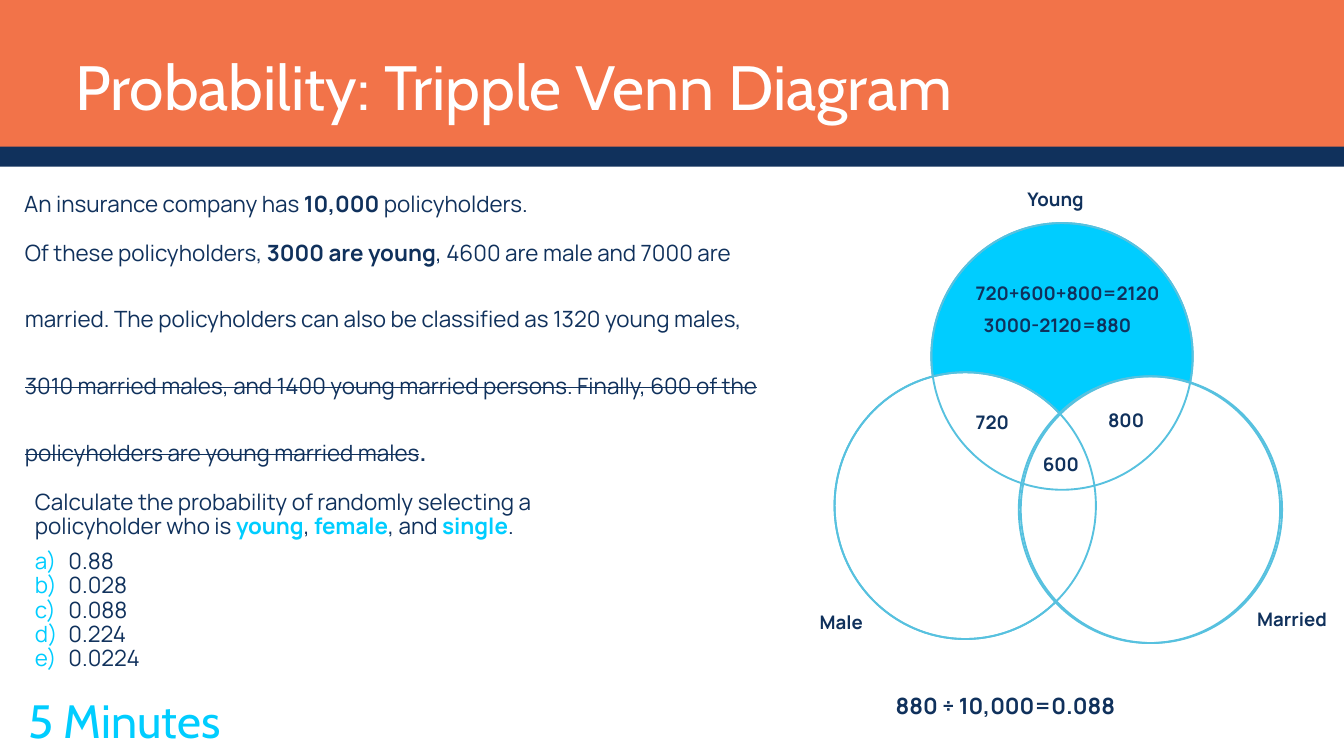
import pptx
import pptx.dml.color
import pptx.enum.shapes
import pptx.enum.text
import pptx.util
from lxml import etree
from pptx.oxml.ns import qn

Pt = pptx.util.Pt
SHAPES = pptx.enum.shapes.MSO_SHAPE
COLOURS = {
    "orange": "F27349",
    "navy": "10315C",
    "cyan": "00CDFF",
    "outline": "57C1DF",
    "white": "FFFFFF",
}


def rgb(name):
    """Return the named colour."""
    return pptx.dml.color.RGBColor.from_string(COLOURS[name])


def add_shape(slide, kind, box, fill=None, line=None):
    """Add a preset shape with an optional fill and outline."""
    shape = slide.shapes.add_shape(kind, *map(Pt, box))
    shape.shadow.inherit = False
    if fill:
        shape.fill.solid()
        shape.fill.fore_color.rgb = rgb(fill)
    else:
        shape.fill.background()
    if line:
        shape.line.color.rgb = rgb(line)
        shape.line.width = Pt(2)
    else:
        shape.line.fill.background()
    return shape


def add_letter(paragraph):
    """Number a paragraph a), b), c) with a hanging indent."""
    properties = paragraph._p.get_or_add_pPr()
    properties.set("marL", str(Pt(36)))
    properties.set("indent", str(-Pt(36)))
    colour = etree.SubElement(properties, qn("a:buClr"))
    etree.SubElement(colour, qn("a:srgbClr"), val=COLOURS["cyan"])
    etree.SubElement(properties, qn("a:buAutoNum"), type="alphaLcParenR")


def add_text(slide, box, paragraphs, size=24, font="Manrope", colour="navy", bold=False,
             spacing=None, centred=False, inset=False, lettered=False):
    """Add a text box from paragraphs of (text, format changes) runs."""
    shape = slide.shapes.add_textbox(*map(Pt, box))
    frame = shape.text_frame
    frame.word_wrap = True
    frame.auto_size = pptx.enum.text.MSO_AUTO_SIZE.SHAPE_TO_FIT_TEXT
    if not inset:
        frame.margin_left = frame.margin_right = frame.margin_top = frame.margin_bottom = 0
    if isinstance(paragraphs, str):
        paragraphs = [[(paragraphs, {})]]
    for index, runs in enumerate(paragraphs):
        paragraph = frame.paragraphs[0] if index == 0 else frame.add_paragraph()
        if spacing:
            paragraph.line_spacing = spacing
        if centred:
            paragraph.alignment = pptx.enum.text.PP_ALIGN.CENTER
        if lettered:
            add_letter(paragraph)
        for text, changes in runs:
            run = paragraph.add_run()
            run.text = text
            run.font.name = font
            run.font.size = Pt(size)
            run.font.bold = changes.get("bold", bold)
            run.font.color.rgb = rgb(changes.get("colour", colour))
            if changes.get("strike"):
                run._r.get_or_add_rPr().set("strike", "sngStrike")
    return shape


def add_header(slide, left, top, width, height):
    """Place the title band, its rule and the title."""
    add_shape(slide, SHAPES.RECTANGLE, (left, top, width, height), "orange")
    add_shape(slide, SHAPES.RECTANGLE, (left, top + height - 18, width + 19.4, 21.6), "navy")
    add_text(slide, (left + 80.6, top + 38.2, 1278, 85), "Probability: Tripple Venn Diagram",
             size=67, font="Cabin", colour="white", spacing=Pt(93.8))


def add_problem(slide, left, top):
    """Place the problem, the question, its answers and the time limit."""
    strong = {"bold": True}
    key = {"bold": True, "colour": "cyan"}
    add_text(slide, (left, top, 690.5, 60.5), [[
        ("An insurance company has ", {}), ("10,000", strong), (" policyholders.", {}),
    ]], spacing=Pt(71.4))
    add_text(slide, (left + 0.7, top + 51.8, 808.6, 347), [[
        ("Of these policyholders, ", {}),
        ("3000 are young", strong),
        (", 4600 are male and 7000 are married. The policyholders can also be classified "
         "as 1320 young males, ", {}),
        ("3010 married males, and 1400 young married persons. Finally, 600 of the "
         "policyholders are young married males", {"strike": True}),
        (".", strong),
    ]], spacing=Pt(71.4))
    add_text(slide, (left + 11.5, top + 365, 620.6, 87.1), [[
        ("Calculate the probability of randomly selecting a policyholder who is ", {}),
        ("young", key), (", ", {}), ("female", key), (", and ", {}), ("single", key), (".", {}),
    ]], spacing=0.9)
    answers = ["0.88", "0.028", "0.088", "0.224", "0.0224"]
    add_text(slide, (left + 11.5, top + 428.4, 1360.8, 174.2),
             [[(answer, {})] for answer in answers], spacing=0.9, lettered=True)
    add_text(slide, (left - 289.4, top + 565.9, 793.4, 70.6), "5 Minutes", size=50,
             font="Cabin", colour="cyan", spacing=Pt(70), centred=True, inset=True)


def add_venn(slide, left, top):
    """Place the three circles, their labels and the working."""
    young, male, married = (126.7, 41), (23, 200.9), (222.5, 205.2)
    circles = [
        (young, "cyan"), (male, "white"), (married, "white"),
        (young, None), (male, None), ((married[0] - 2.1, married[1]), None),
    ]
    for (x, y), fill in circles:
        add_shape(slide, SHAPES.OVAL, (left + x, top + y, 280, 285.8), fill, "outline")
    labels = [
        ("Young", 222.5, 0, 118), ("Male", 0, 452.9, 118), ("Married", 468.7, 449.3, 118),
        ("600", 239, 283.7, 118), ("800", 308.9, 236.9, 118), ("720", 167, 238.3, 118),
        ("720+600+800=2120", 167, 100.1, 236.2), ("3000-2120=880", 175.7, 134.6, 236.2),
    ]
    for text, x, y, width in labels:
        add_text(slide, (left + x, top + y, width, 31.7), text, size=20, bold=True, inset=True)
    add_text(slide, (left + 81.4, top + 540, 324, 36), "880 ÷ 10,000=0.088",
             bold=True, inset=True)


def main():
    """Build and save the slide."""
    presentation = pptx.Presentation()
    presentation.slide_width = Pt(1440)
    presentation.slide_height = Pt(810)
    slide = presentation.slides.add_slide(presentation.slide_layouts[6])
    add_header(slide, 0, 0, 1440, 175)
    add_problem(slide, 25.9, 161.3)
    add_venn(slide, 871.2, 198)
    presentation.save("out.pptx")


if __name__ == "__main__":
    main()
